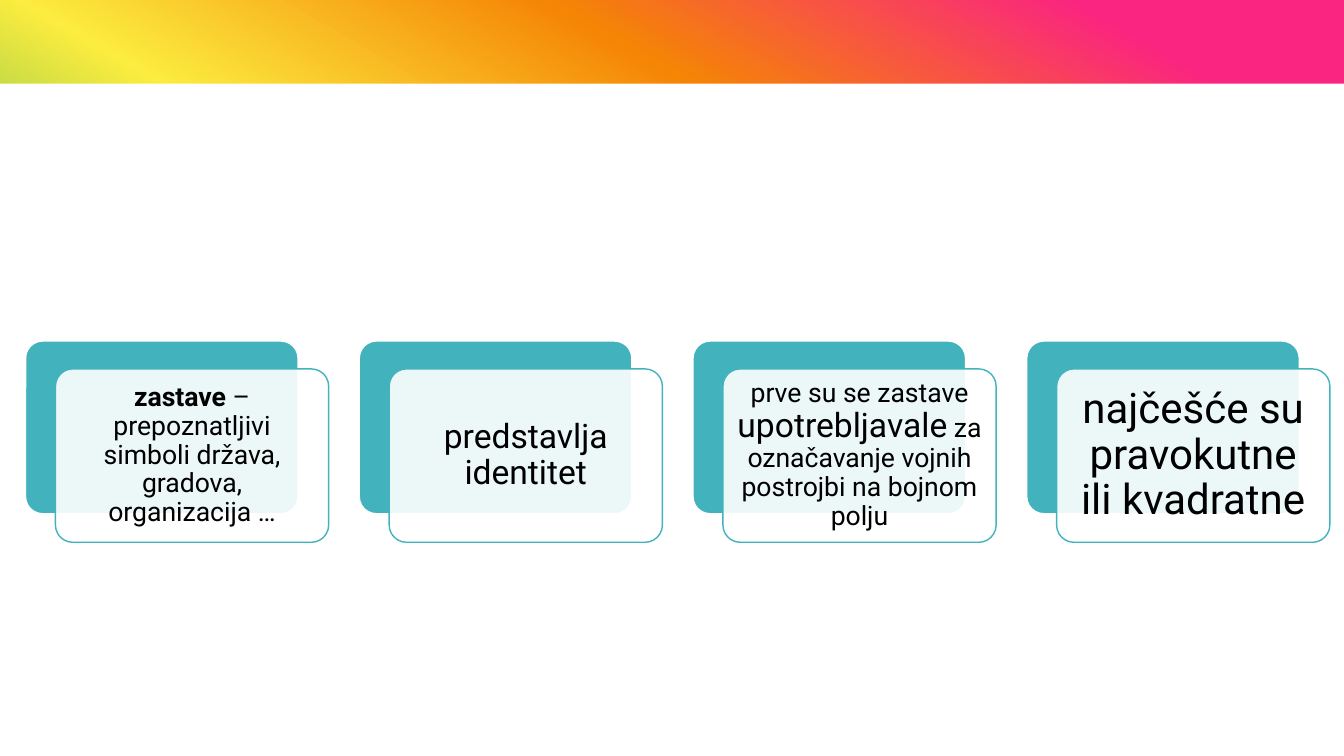
from dataclasses import dataclass

from lxml.etree import SubElement
from pptx import Presentation
from pptx.dml.color import RGBColor
from pptx.enum.shapes import MSO_SHAPE as Preset
from pptx.enum.text import MSO_ANCHOR as Anchor, PP_ALIGN as Align
from pptx.oxml.ns import qn
from pptx.shapes.autoshape import Shape
from pptx.slide import Slide
from pptx.util import Inches, Pt

WHITE = RGBColor(0xFF, 0xFF, 0xFF)
BLACK = RGBColor(0x00, 0x00, 0x00)
TEAL = RGBColor(0x42, 0xB3, 0xBD)
PINK = RGBColor(0xFA, 0x24, 0x81)
ORANGE = RGBColor(0xF5, 0x85, 0x05)
YELLOW = RGBColor(0xFC, 0xEC, 0x3F)
GREEN = RGBColor(0x51, 0xB8, 0x51)
RAINBOW = [(10, PINK), (30, ORANGE), (50, YELLOW), (70, GREEN), (90, TEAL)]

PAGE_WIDTH, PAGE_HEIGHT = 13.33, 7.5
BAND_HEIGHT = 0.83
CARD_WIDTH, CARD_HEIGHT = 2.71, 1.72
CARD_LEFT, CARD_TOP, CARD_PITCH = 0.25, 3.38, 3.31
FRONT_SHIFT_X, FRONT_SHIFT_Y = 0.3, 0.28


@dataclass
class Span:
    text: str
    size: int
    bold: bool = False


@dataclass
class Card:
    spans: list[Span]
    inset: float = 0.1


# The five-line texts use 19 points so that they stay inside their cards
CARDS = [
    Card([Span("zastave", 19, bold=True),
          Span(" – prepoznatljivi simboli država, gradova, organizacija …", 19)]),
    Card([Span("predstavlja identitet", 24)]),
    Card([Span("prve su se zastave ", 19),
          Span("upotrebljavale", 24),
          Span(" za označavanje vojnih postrojbi na bojnom polju", 19)], inset=0.08),
    Card([Span("najčešće su pravokutne ili kvadratne", 30)], inset=0.12),
]


def add_box(page: Slide, preset: Preset, left: float, top: float,
            width: float, height: float, fill: RGBColor) -> Shape:
    box = page.shapes.add_shape(
        preset, Inches(left), Inches(top), Inches(width), Inches(height))
    box.shadow.inherit = False
    box.fill.solid()
    box.fill.fore_color.rgb = fill
    box.line.fill.background()
    return box


def add_panel(page: Slide, left: float, top: float, fill: RGBColor,
              line: RGBColor, line_width: float) -> Shape:
    panel = add_box(page, Preset.ROUNDED_RECTANGLE, left, top,
                    CARD_WIDTH, CARD_HEIGHT, fill)
    panel.adjustments[0] = 0.1
    panel.line.color.rgb = line
    panel.line.width = Pt(line_width)
    return panel


def set_gradient(box: Shape, stops: list[tuple[int, RGBColor]], clockwise: int) -> None:
    box.fill.gradient()
    box.fill.gradient_angle = 360 - clockwise
    stop_list = box._element.spPr.find(qn("a:gradFill")).find(qn("a:gsLst"))
    for old_stop in list(stop_list):
        stop_list.remove(old_stop)
    for percent, color in stops:
        stop = SubElement(stop_list, qn("a:gs"), pos=str(percent * 1000))
        SubElement(stop, qn("a:srgbClr"), val=str(color))


def set_opacity(box: Shape, percent: int) -> None:
    color = box._element.spPr.find(qn("a:solidFill")).find(qn("a:srgbClr"))
    SubElement(color, qn("a:alpha"), val=str(percent * 1000))


def write_text(box: Shape, spans: list[Span], *, inset: float,
               font: str = "Roboto", color: RGBColor = BLACK) -> None:
    frame = box.text_frame
    frame.word_wrap = True
    frame.vertical_anchor = Anchor.MIDDLE
    frame.margin_left = frame.margin_right = Inches(inset)
    frame.margin_top = frame.margin_bottom = Inches(inset)
    para = frame.paragraphs[0]
    para.alignment = Align.CENTER
    para.line_spacing = 0.9
    for span in spans:
        run = para.add_run()
        run.text = span.text
        run.font.name = font
        run.font.size = Pt(span.size)
        run.font.bold = span.bold
        run.font.color.rgb = color


def add_card(page: Slide, left: float, card: Card) -> None:
    add_panel(page, left, CARD_TOP, TEAL, WHITE, 1.5)
    front = add_panel(page, left + FRONT_SHIFT_X, CARD_TOP + FRONT_SHIFT_Y,
                      WHITE, TEAL, 1)
    set_opacity(front, 90)
    write_text(front, card.spans, inset=card.inset)


def main() -> None:
    deck = Presentation()
    deck.slide_width, deck.slide_height = Inches(PAGE_WIDTH), Inches(PAGE_HEIGHT)
    page = deck.slides.add_slide(deck.slide_layouts[6])

    # Rainbow backdrop, left open as a band above the white body
    backdrop = add_box(page, Preset.RECTANGLE, 0, 0, PAGE_WIDTH, PAGE_HEIGHT, WHITE)
    set_gradient(backdrop, RAINBOW, clockwise=120)
    add_box(page, Preset.RECTANGLE, 0, BAND_HEIGHT,
            PAGE_WIDTH, PAGE_HEIGHT - BAND_HEIGHT, WHITE)

    # Row of cards
    for index, card in enumerate(CARDS):
        add_card(page, CARD_LEFT + index * CARD_PITCH, card)

    deck.save("out.pptx")


if __name__ == "__main__":
    main()
